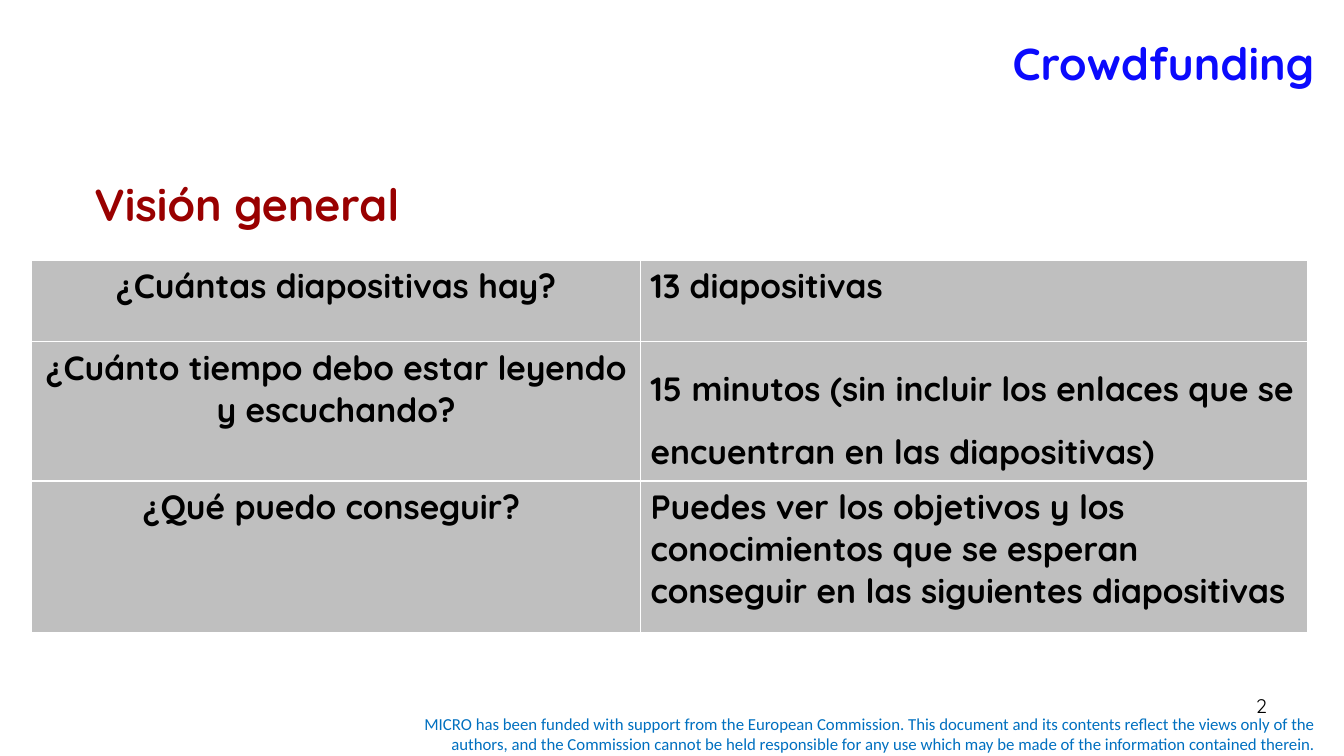
import pptx
import pptx.util
import pptx.dml.color
import pptx.enum.text
import pptx.oxml
from pptx.util import Cm
from lxml import etree

NS = "http://schemas.openxmlformats.org/drawingml/2006/main"
ALIGN = pptx.enum.text.PP_ALIGN
ANCHOR = pptx.enum.text.MSO_ANCHOR


def tint(code):
    return pptx.dml.color.RGBColor.from_string(code)


def style(para, size, code, bold=False, align=ALIGN.LEFT, face="Quicksand"):
    para.alignment = align
    para.font.name = face
    para.font.size = pptx.util.Pt(size)
    para.font.bold = bold
    para.font.color.rgb = tint(code)


deck = pptx.Presentation()
deck.slide_width = Cm(33.87)
deck.slide_height = Cm(19.05)
slide = deck.slides.add_slide(deck.slide_layouts[5])

title = slide.shapes.title
title.left, title.top, title.width, title.height = Cm(2.9), Cm(0), Cm(30.48), Cm(3.18)
title.text_frame.text = "Crowdfunding"
title.text_frame.auto_size = pptx.enum.text.MSO_AUTO_SIZE.NONE
title.text_frame.vertical_anchor = ANCHOR.MIDDLE
style(title.text_frame.paragraphs[0], 32, "0B0AFD", True, ALIGN.RIGHT)

head = slide.shapes.add_textbox(Cm(2.13), Cm(4.34), Cm(12.07), Cm(1.63)).text_frame
head.word_wrap = True
head.text = "Visión general"
style(head.paragraphs[0], 32, "990000", True)

rows = [
    ("¿Cuántas diapositivas hay?", "13 diapositivas"),
    ("¿Cuánto tiempo debo estar leyendo y escuchando?",
     "15 minutos (sin incluir los enlaces que se encuentran en las diapositivas)"),
    ("¿Qué puedo conseguir? ",
     "Puedes ver los objetivos y los conocimientos que se esperan conseguir "
     "en las siguientes diapositivas"),
]
wide = [15.34, 16.81]
high = [2.06, 3.51, 3.81]
grid = slide.shapes.add_table(
    len(rows), len(wide), Cm(0.8), Cm(6.55), Cm(sum(wide)), Cm(sum(high))).table
for col, width in zip(grid.columns, wide):
    col.width = Cm(width)
for row, height, texts in zip(grid.rows, high, rows):
    row.height = Cm(height)
    for cell, text, align in zip(row.cells, texts, (ALIGN.CENTER, ALIGN.LEFT)):
        cell.text = text
        style(cell.text_frame.paragraphs[0], 24, "000000", True, align)
        props = cell._tc.get_or_add_tcPr()
        for side in ("lnL", "lnR", "lnT", "lnB"):
            props.append(pptx.oxml.parse_xml(
                f'<a:{side} xmlns:a="{NS}" w="12700"><a:solidFill>'
                f'<a:srgbClr val="FFFFFF"/></a:solidFill></a:{side}>'))
        cell.fill.solid()
        cell.fill.fore_color.rgb = tint("BFBFBF")
grid.cell(1, 1).text_frame.paragraphs[0].line_spacing = 1.5

page = slide.shapes.add_textbox(Cm(24.28), Cm(17.35), Cm(7.9), Cm(1.32)).text_frame
page.word_wrap = True
para = page.paragraphs[0]
style(para, 14, "000000", align=ALIGN.RIGHT)
para.add_run().text = "2"

note = slide.shapes.add_textbox(Cm(9.53), Cm(17.86), Cm(23.88), Cm(1.27)).text_frame
note.word_wrap = True
note.vertical_anchor = ANCHOR.MIDDLE
note.text = (
    "MICRO has been funded with support from the European Commission. "
    "This document and its contents reflect the views only of the authors, "
    "and the Commission cannot be held responsible for any use which may be "
    "made of the information contained therein.")
style(note.paragraphs[0], 12, "0070C0", align=ALIGN.RIGHT, face="Calibri")

deck.save("out.pptx")
